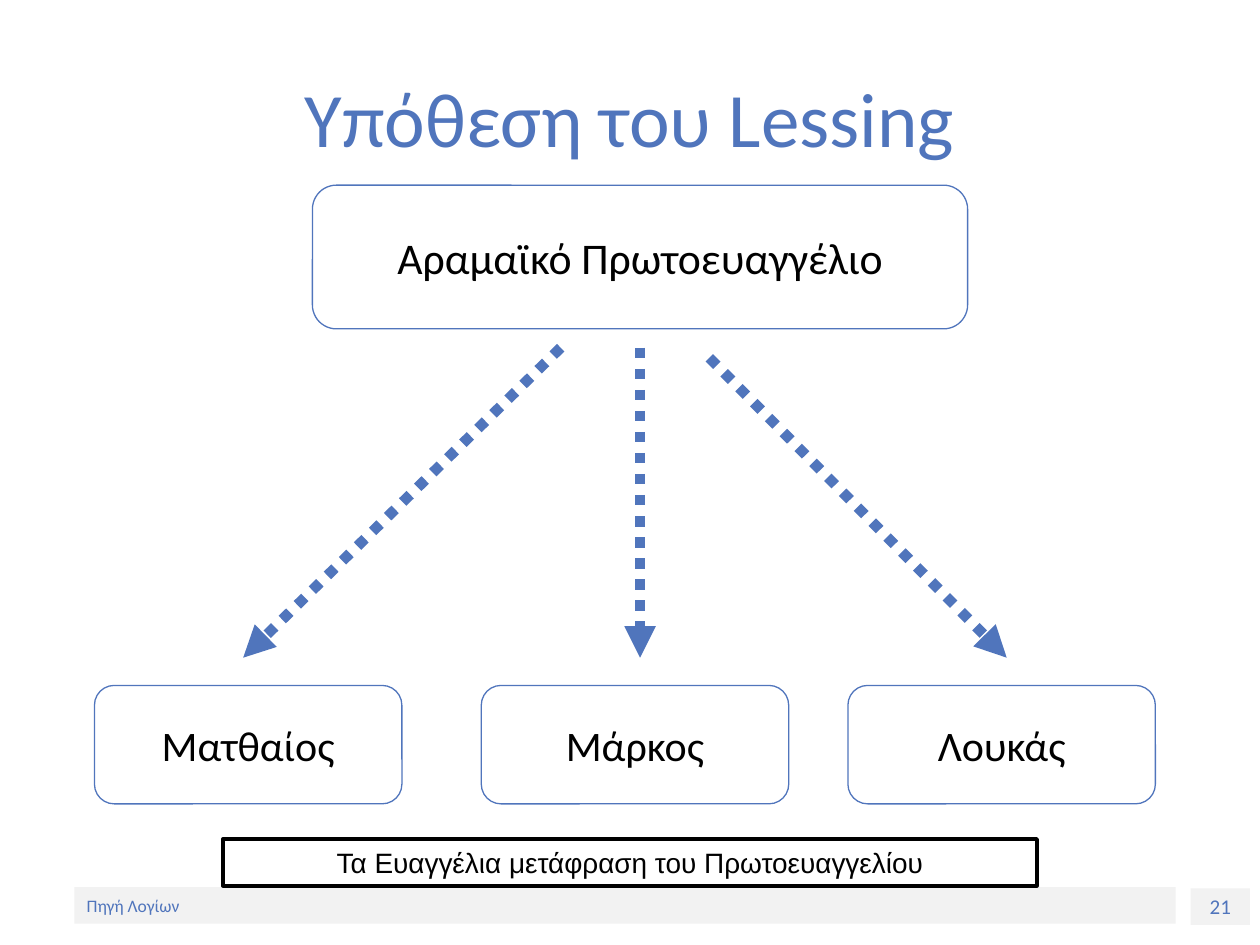
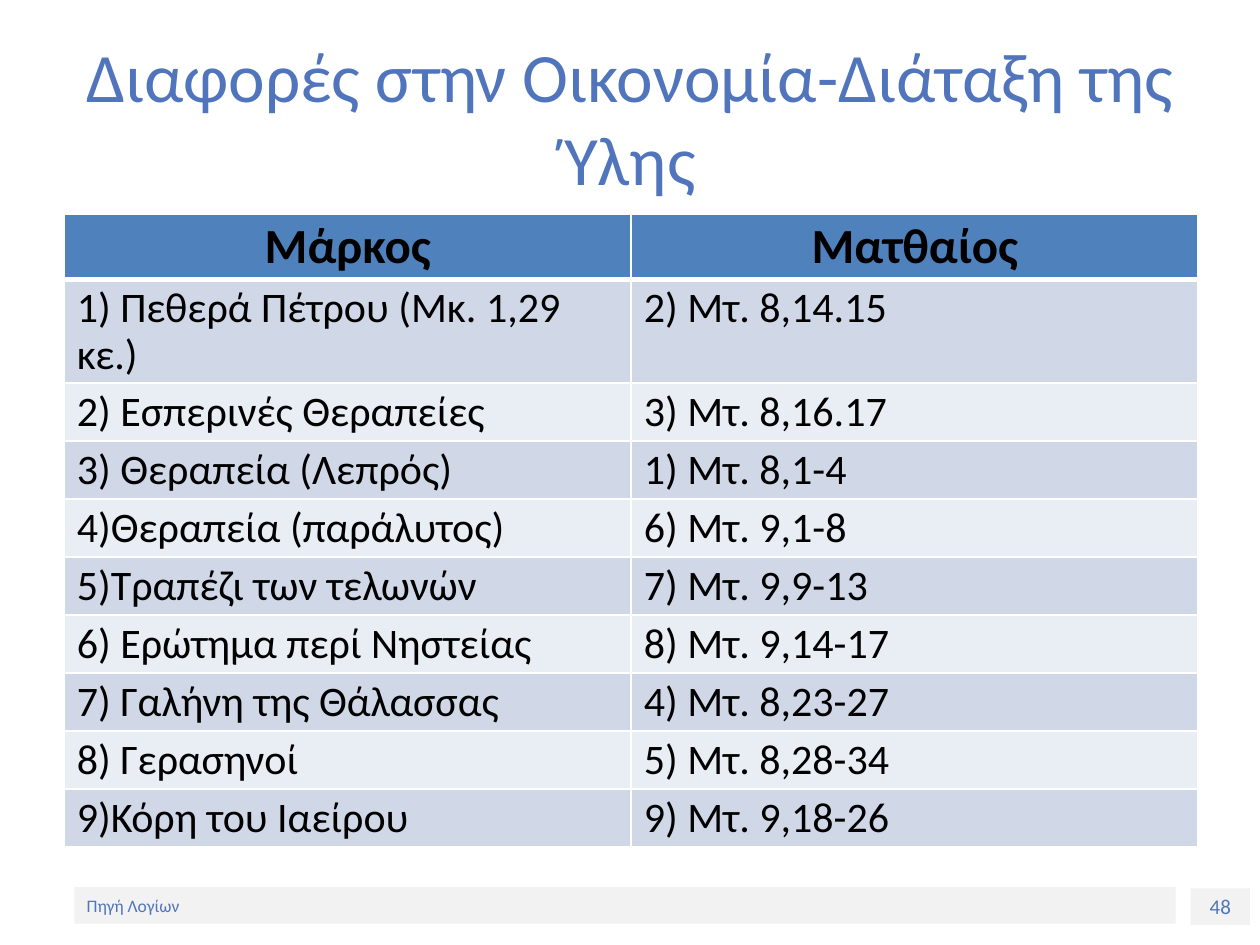
from lxml.etree import SubElement
from pptx import Presentation
from pptx.dml.color import RGBColor
from pptx.enum.dml import MSO_LINE
from pptx.enum.shapes import MSO_CONNECTOR, MSO_SHAPE
from pptx.enum.text import MSO_ANCHOR, PP_ALIGN
from pptx.oxml import parse_xml
from pptx.oxml.ns import nsdecls, qn
from pptx.util import Inches, Pt

BLUE = "5075BC"
BLACK = "000000"
WHITE = "FFFFFF"
FOOTER_GREY = "F2F2F2"
HEADER_BLUE = "4F81BD"
BAND_FILLS = ("D0D8E8", "E9EDF4")

FOOTER_TEXT = "Πηγή Λογίων"
SOURCE_GOSPEL = "Αραμαϊκό Πρωτοευαγγέλιο"
GOSPELS = {"Mατθαίος": 0.75, "Μάρκος": 3.82, "Λουκάς": 6.73}
DESCENT_ARROWS = (
    ((4.45, 2.76), (1.93, 5.22)),
    ((5.08, 2.76), (5.08, 5.22)),
    ((5.63, 2.84), (7.99, 5.22)),
)
PERICOPES = (
    ("Mάρκος", "Ματθαίος"),
    ("1) Πεθερά Πέτρου (Μκ. 1,29 κε.)", "2) Μτ. 8,14.15"),
    ("2) Εσπερινές Θεραπείες", "3) Μτ. 8,16.17"),
    ("3) Θεραπεία (Λεπρός)", "1) Μτ. 8,1-4"),
    ("4)Θεραπεία (παράλυτος)", "6) Μτ. 9,1-8"),
    ("5)Τραπέζι των τελωνών", "7) Μτ. 9,9-13"),
    ("6) Ερώτημα περί Νηστείας", "8) Μτ. 9,14-17"),
    ("7) Γαλήνη της Θάλασσας", "4) Μτ. 8,23-27"),
    ("8) Γερασηνοί", "5) Μτ. 8,28-34"),
    ("9)Κόρη του Ιαείρου", "9) Μτ. 9,18-26"),
)


def paint(color_format, hex_color):
    color_format.rgb = RGBColor.from_string(hex_color)


def set_fill(owner, hex_color):
    owner.fill.solid()
    paint(owner.fill.fore_color, hex_color)


def apply_format(target, values):
    for name, value in values.items():
        setattr(target, name, value)


def write(frame, text, size, color=BLACK, align=PP_ALIGN.CENTER,
          font="Calibri", bold=False, spacing=1.0, wrap=True):
    """Put one formatted, vertically centred paragraph in a text frame."""
    apply_format(frame, {"word_wrap": wrap, "vertical_anchor": MSO_ANCHOR.MIDDLE})
    paragraph = frame.paragraphs[0]
    paragraph.text = text
    apply_format(paragraph, {"alignment": align, "line_spacing": spacing})
    apply_format(paragraph.font, {"name": font, "size": Pt(size), "bold": bold})
    paint(paragraph.font.color, color)


def add_panel(slide, preset, bounds, fill=None, line=None, line_width=0.75):
    panel = slide.shapes.add_shape(preset, *map(Inches, bounds))
    panel.shadow.inherit = False
    if fill:
        set_fill(panel, fill)
    else:
        panel.fill.background()
    if line:
        paint(panel.line.color, line)
        panel.line.width = Pt(line_width)
    else:
        panel.line.fill.background()
    return panel


def add_gospel(slide, name, bounds, size=24):
    gospel = add_panel(slide, MSO_SHAPE.ROUNDED_RECTANGLE, bounds, line=BLUE)
    write(gospel.text_frame, name, size, wrap=False)


def add_descent_arrow(slide, start, end):
    arrow = slide.shapes.add_connector(
        MSO_CONNECTOR.STRAIGHT, *map(Inches, start + end))
    apply_format(arrow.line, {"width": Pt(6), "dash_style": MSO_LINE.ROUND_DOT})
    paint(arrow.line.color, BLUE)
    properties = arrow.line._get_or_add_ln()
    SubElement(properties, qn("a:tailEnd"), type="triangle")
    SubElement(properties.getparent(), qn("a:effectLst"))


def add_cell_borders(cell, top, bottom):
    """Draw white borders; top and bottom are widths in points."""
    widths = {"lnL": 1, "lnR": 1, "lnT": top, "lnB": bottom}
    properties = cell._tc.get_or_add_tcPr()
    for index, (side, width) in enumerate(widths.items()):
        properties.insert(index, parse_xml(
            f'<a:{side} {nsdecls("a")} w="{Pt(width)}"><a:solidFill>'
            f'<a:srgbClr val="{WHITE}"/></a:solidFill></a:{side}>'))


def add_pericope_table(slide):
    bounds = map(Inches, (0.51, 1.7, 9, 5.02))
    table = slide.shapes.add_table(len(PERICOPES), 2, *bounds).table
    for row_index, texts in enumerate(PERICOPES):
        table.rows[row_index].height = Inches(0.41)
        is_header = row_index == 0
        fill = HEADER_BLUE if is_header else BAND_FILLS[(row_index - 1) % 2]
        for column, text in enumerate(texts):
            cell = table.cell(row_index, column)
            write(cell.text_frame, text, 28 if is_header else 24,
                  align=PP_ALIGN.CENTER if is_header else PP_ALIGN.LEFT,
                  bold=is_header, spacing=0.9)
            cell.vertical_anchor = MSO_ANCHOR.TOP
            set_fill(cell, fill)
            add_cell_borders(cell, top=3 if row_index == 1 else 1,
                             bottom=3 if is_header else 1)


def add_page(deck, title, number, title_size=44):
    """Add a slide with the shared title, footer band and slide number."""
    slide = deck.slides.add_slide(deck.slide_layouts[6])
    page_number = add_panel(slide, MSO_SHAPE.RECTANGLE, (9.45, 7.05, 0.47, 0.29),
                            FOOTER_GREY)
    write(page_number.text_frame, str(number), 12, BLUE)
    footer = add_panel(slide, MSO_SHAPE.RECTANGLE, (0.59, 7.04, 8.74, 0.29),
                       FOOTER_GREY)
    write(footer.text_frame, FOOTER_TEXT, 10, BLUE, PP_ALIGN.LEFT)
    heading = slide.shapes.add_textbox(*map(Inches, (0.5, 0.3, 9, 1.25)))
    write(heading.text_frame, title, title_size, BLUE)
    return slide


def add_hypothesis_page(deck):
    slide = add_page(deck, "Υπόθεση του Lessing", 21)
    add_gospel(slide, SOURCE_GOSPEL, (2.48, 1.47, 5.2, 1.14), 25)
    for name, left in GOSPELS.items():
        add_gospel(slide, name, (left, 5.44, 2.44, 0.94))
    for start, end in DESCENT_ARROWS:
        add_descent_arrow(slide, start, end)
    conclusion = add_panel(slide, MSO_SHAPE.RECTANGLE, (1.77, 6.66, 6.46, 0.37),
                           line=BLACK, line_width=2.25)
    write(conclusion.text_frame, "Τα Ευαγγέλια μετάφραση του Πρωτοευαγγελίου",
          16, font="Arial")


def add_differences_page(deck):
    slide = add_page(deck, "Διαφορές στην Οικονομία-Διάταξη της Ύλης", 48, 39.6)
    add_pericope_table(slide)


def main():
    deck = Presentation()
    apply_format(deck, {"slide_width": Inches(10), "slide_height": Inches(7.5)})
    add_hypothesis_page(deck)
    add_differences_page(deck)
    deck.save("out.pptx")


if __name__ == "__main__":
    main()
